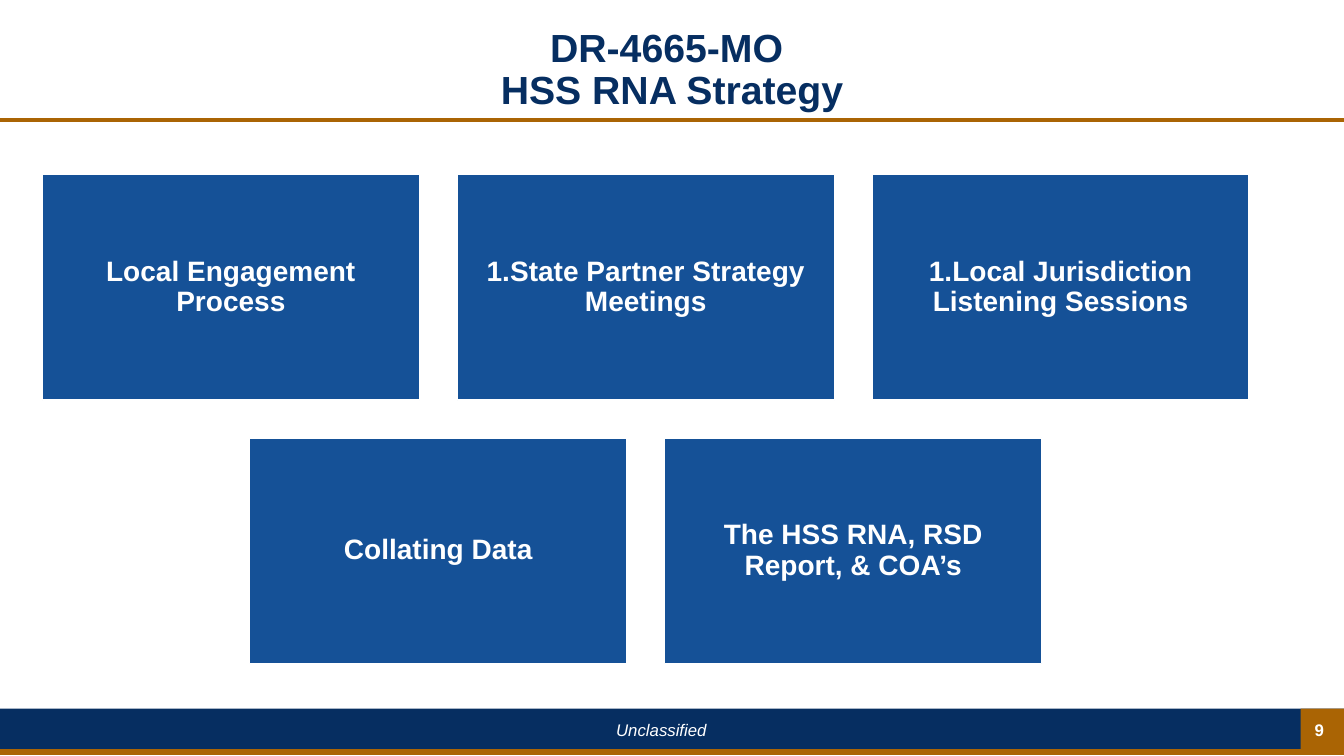
from lxml.etree import SubElement
from pptx import Presentation
from pptx.dml.color import RGBColor
from pptx.enum.shapes import MSO_CONNECTOR as Connector, MSO_SHAPE as Shape
from pptx.enum.text import MSO_ANCHOR as Anchor, PP_ALIGN as Align
from pptx.oxml.ns import qn
from pptx.util import Inches, Pt

WIDTH, HEIGHT = 13.33, 7.5
NAVY, BLUE, BRONZE, WHITE = "062E61", "155197", "AA6404", "FFFFFF"
CARD_WIDTH, CARD_HEIGHT, GAP = 3.74, 2.24, 0.375
CARD_ROWS = [
    [("Local Engagement Process", False),
     ("State Partner Strategy Meetings", True),
     ("Local Jurisdiction Listening Sessions", True)],
    [("Collating Data", False),
     ("The HSS RNA, RSD Report, & COA’s", False)],
]


def color(hex_value):
    return RGBColor.from_string(hex_value)


def write(shape, text, size, ink=WHITE, bold=False, italic=False,
          anchor=Anchor.MIDDLE, spacing=None, inset=None, numbered=False):
    frame = shape.text_frame
    frame.word_wrap = True
    frame.vertical_anchor = anchor
    if inset is not None:
        frame.margin_left = frame.margin_right = Inches(inset)
        frame.margin_top = frame.margin_bottom = Inches(inset)
    paragraph = frame.paragraphs[0]
    paragraph.text = text
    paragraph.alignment = Align.CENTER
    if numbered:
        properties = paragraph._p.get_or_add_pPr()
        properties.set("marL", "0")
        properties.set("indent", "0")
        SubElement(properties, qn("a:buFont"), typeface="+mj-lt")
        SubElement(properties, qn("a:buAutoNum"), type="arabicPeriod")
    if spacing:
        paragraph.line_spacing = spacing
    for run in paragraph.runs:
        font = run.font
        font.name, font.size = "Arial", Pt(size)
        font.bold, font.italic = bold, italic
        font.color.rgb = color(ink)


def add_text(slide, box, text, size, **style):
    write(slide.shapes.add_textbox(*map(Inches, box)), text, size, **style)


def add_block(slide, box, fill, outline=None):
    shape = slide.shapes.add_shape(Shape.RECTANGLE, *map(Inches, box))
    shape.shadow.inherit = False
    shape.fill.solid()
    shape.fill.fore_color.rgb = color(fill)
    if outline:
        shape.line.color.rgb = color(outline)
        shape.line.width = Pt(1)
    else:
        shape.line.fill.background()
    return shape


def add_rule(slide, top, weight):
    rule = slide.shapes.add_connector(
        Connector.STRAIGHT, 0, Inches(top), Inches(WIDTH), Inches(top))
    rule.line.color.rgb = color(BRONZE)
    rule.line.width = Pt(weight)
    SubElement(rule._element.spPr, qn("a:effectLst"))


def add_header(slide, left, top, width, height):
    add_rule(slide, top + height - 0.04, 3)
    add_text(slide, (left, top, width, height),
             "DR-4665-MO \vHSS RNA Strategy", 28,
             ink=NAVY, bold=True, spacing=0.9)


def add_footer(slide, left, top, width, height):
    add_block(slide, (left, top, width, height), NAVY)
    add_text(slide, (left + 5.1, top + 0.06, 2.92, 0.3), "Unclassified", 12,
             italic=True, anchor=Anchor.TOP)
    number_left = left + width - height
    add_block(slide, (number_left, top, height, height), BRONZE)
    add_text(slide, (number_left - 0.03, top + 0.09, height, 0.24), "9", 12,
             bold=True)
    add_rule(slide, top + height, 4.5)


def add_cards(slide, left, top, width):
    for row, cards in enumerate(CARD_ROWS):
        row_width = len(cards) * (CARD_WIDTH + GAP) - GAP
        row_left = left + (width - row_width) / 2
        for column, (label, numbered) in enumerate(cards):
            box = (row_left + column * (CARD_WIDTH + GAP),
                   top + row * (CARD_HEIGHT + GAP), CARD_WIDTH, CARD_HEIGHT)
            card = add_block(slide, box, BLUE, outline=WHITE)
            write(card, label, 20, bold=True, spacing=0.9, inset=0.08,
                  numbered=numbered)


def main():
    presentation = Presentation()
    presentation.slide_width = Inches(WIDTH)
    presentation.slide_height = Inches(HEIGHT)
    slide = presentation.slides.add_slide(presentation.slide_layouts[6])
    add_footer(slide, 0, 7.03, WIDTH, 0.43)
    add_header(slide, 0, 0.18, WIDTH, 1.05)
    add_cards(slide, 0.42, 1.73, 11.97)
    presentation.save("out.pptx")


if __name__ == "__main__":
    main()
